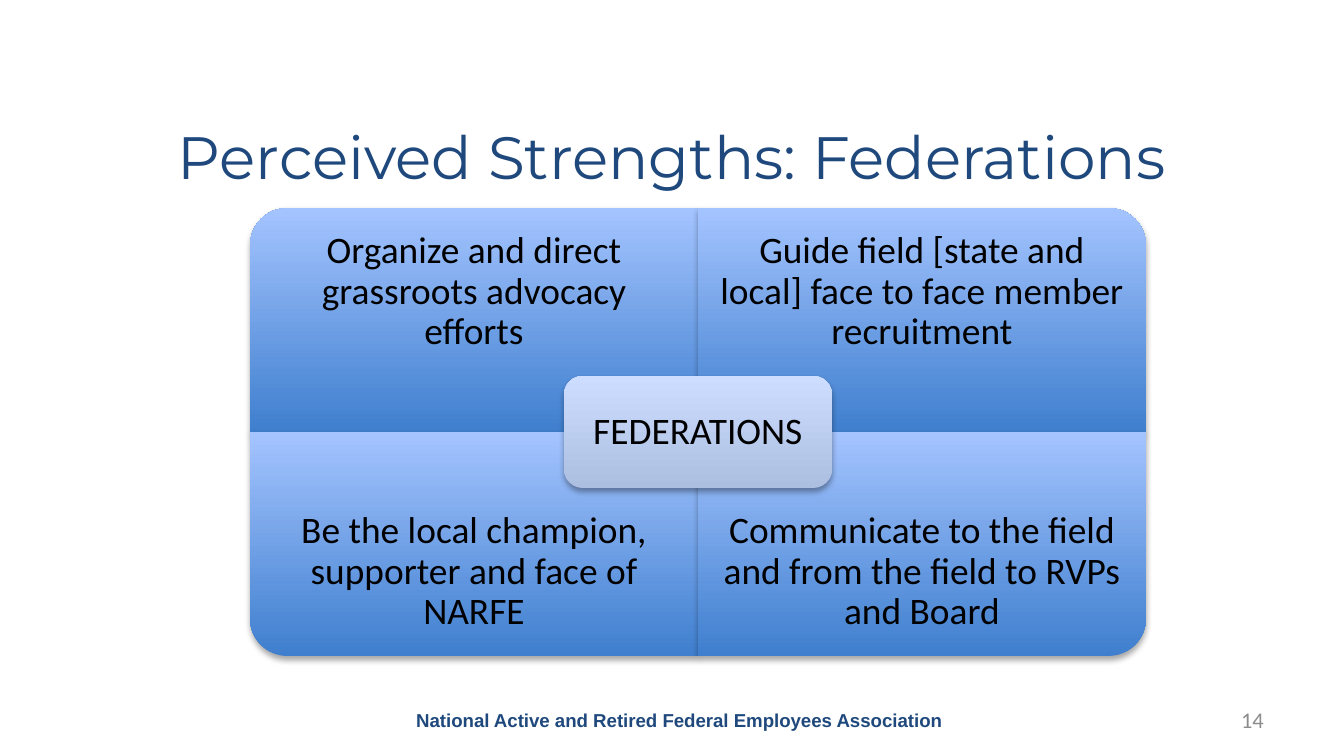
import lxml.etree
import pptx
import pptx.dml.color
import pptx.enum.shapes
import pptx.enum.text
import pptx.oxml
import pptx.oxml.ns
import pptx.util

RGBColor = pptx.dml.color.RGBColor
Align = pptx.enum.text.PP_ALIGN
Shape = pptx.enum.shapes.MSO_SHAPE

NAVY = RGBColor(0x1F, 0x49, 0x7D)
GREY = RGBColor(0x8C, 0x8C, 0x8C)
BLACK = RGBColor(0, 0, 0)
QUADRANT_COLORS = (RGBColor(0x3F, 0x7F, 0xCE), RGBColor(0xA4, 0xC4, 0xFF))
HUB_COLORS = (RGBColor(0xAD, 0xBF, 0xE1), RGBColor(0xCC, 0xDD, 0xFF))

HEADINGS = [
    ("Perceived Strengths: Federations", (67, 108, 1210, 95), "Montserrat", 32, NAVY, False, Align.CENTER),
    ("National Active and Retired Federal Employees Association",
     (394, 700, 570, 40), "Arial", 10, NAVY, True, Align.CENTER),
    ("14", (964, 700, 313, 40), "Calibri", 12, GREY, False, Align.RIGHT),
]
STRENGTHS = [
    ("Organize and direct grassroots advocacy efforts", 0, 0, 270),
    ("Guide field [state and local] face to face member recruitment", 1, 0, 0),
    ("Be the local champion, supporter and face of NARFE", 0, 1, 180),
    ("Communicate to the field and from the field to RVPs and Board", 1, 1, 90),
]
HUB = "FEDERATIONS"

SLIDE_WIDTH, SLIDE_HEIGHT = 1344, 756
MATRIX_LEFT, MATRIX_TOP = 250, 208
CELL_WIDTH, CELL_HEIGHT = 448, 224
STRENGTH_HEIGHT = 168
HUB_WIDTH, HUB_HEIGHT = 268, 112
HUB_INSET = 5
STRENGTH_MARGIN, HUB_MARGIN = 21, 11

SHADOW = (
    '<a:effectLst %s><a:outerShdw blurRad="40000" dist="23000" dir="5400000" rotWithShape="0">'
    '<a:srgbClr val="000000"><a:alpha val="35000"/></a:srgbClr></a:outerShdw></a:effectLst>'
) % pptx.oxml.ns.nsdecls("a")


def px(length):
    """Turn slide px into EMU."""
    return pptx.util.Emu(round(length * 914400 / 134.4))


def add_text(slide, text, box, font_name, size, color, bold=False, align=Align.CENTER, margin=None):
    """Add a vertically centred, wrapping text box and return its paragraph."""
    frame = slide.shapes.add_textbox(*map(px, box)).text_frame
    frame.word_wrap = True
    frame.vertical_anchor = pptx.enum.text.MSO_ANCHOR.MIDDLE
    if margin is not None:
        frame.margin_left = frame.margin_right = px(margin)
        frame.margin_top = frame.margin_bottom = px(margin)
    paragraph = frame.paragraphs[0]
    paragraph.alignment = align
    run = paragraph.add_run()
    run.text = text
    run.font.name = font_name
    run.font.size = pptx.util.Pt(size)
    run.font.bold = bold
    run.font.color.rgb = color
    return paragraph


def add_label(slide, text, box, margin):
    """Add a label of the matrix."""
    paragraph = add_text(slide, text, box, "Calibri", 20, BLACK, margin=margin)
    paragraph.line_spacing = 0.9
    paragraph.space_after = pptx.util.Pt(7)


def add_panel(slide, preset, box, colors, rotation=0):
    """Add a shaded panel that covers the box once it is rotated."""
    left, top, width, height = box
    if rotation % 180:
        left, top = left + (width - height) / 2, top + (height - width) / 2
        width, height = height, width
    panel = slide.shapes.add_shape(preset, *map(px, (left, top, width, height)))
    panel.rotation = rotation
    panel.line.fill.background()
    panel.fill.gradient()
    panel.fill.gradient_angle = 90
    for stop, color, position in zip(panel.fill.gradient_stops, colors, (0, 1)):
        stop.color.rgb = color
        stop.position = position
    properties = panel.element.spPr
    properties.find(pptx.oxml.ns.qn("a:gradFill")).set("rotWithShape", "0")
    properties.append(pptx.oxml.parse_xml(SHADOW))


def main():
    """Build the slide of federation strengths."""
    deck = pptx.Presentation()
    deck.slide_width, deck.slide_height = px(SLIDE_WIDTH), px(SLIDE_HEIGHT)
    slide = deck.slides.add_slide(deck.slide_layouts[6])

    for heading in HEADINGS:
        add_text(slide, *heading)

    for text, column, row, rotation in STRENGTHS:
        left = MATRIX_LEFT + column * CELL_WIDTH
        top = MATRIX_TOP + row * CELL_HEIGHT
        add_panel(slide, Shape.ROUND_1_RECTANGLE, (left, top, CELL_WIDTH, CELL_HEIGHT),
                  QUADRANT_COLORS, rotation)
        label_top = top + row * (CELL_HEIGHT - STRENGTH_HEIGHT)
        add_label(slide, text, (left, label_top, CELL_WIDTH, STRENGTH_HEIGHT), STRENGTH_MARGIN)

    hub_left = MATRIX_LEFT + CELL_WIDTH - HUB_WIDTH / 2
    hub_top = MATRIX_TOP + CELL_HEIGHT - HUB_HEIGHT / 2
    add_panel(slide, Shape.ROUNDED_RECTANGLE, (hub_left, hub_top, HUB_WIDTH, HUB_HEIGHT), HUB_COLORS)
    add_label(slide, HUB, (hub_left + HUB_INSET, hub_top + HUB_INSET,
                           HUB_WIDTH - 2 * HUB_INSET, HUB_HEIGHT - 2 * HUB_INSET), HUB_MARGIN)

    deck.save("out.pptx")


if __name__ == "__main__":
    main()
